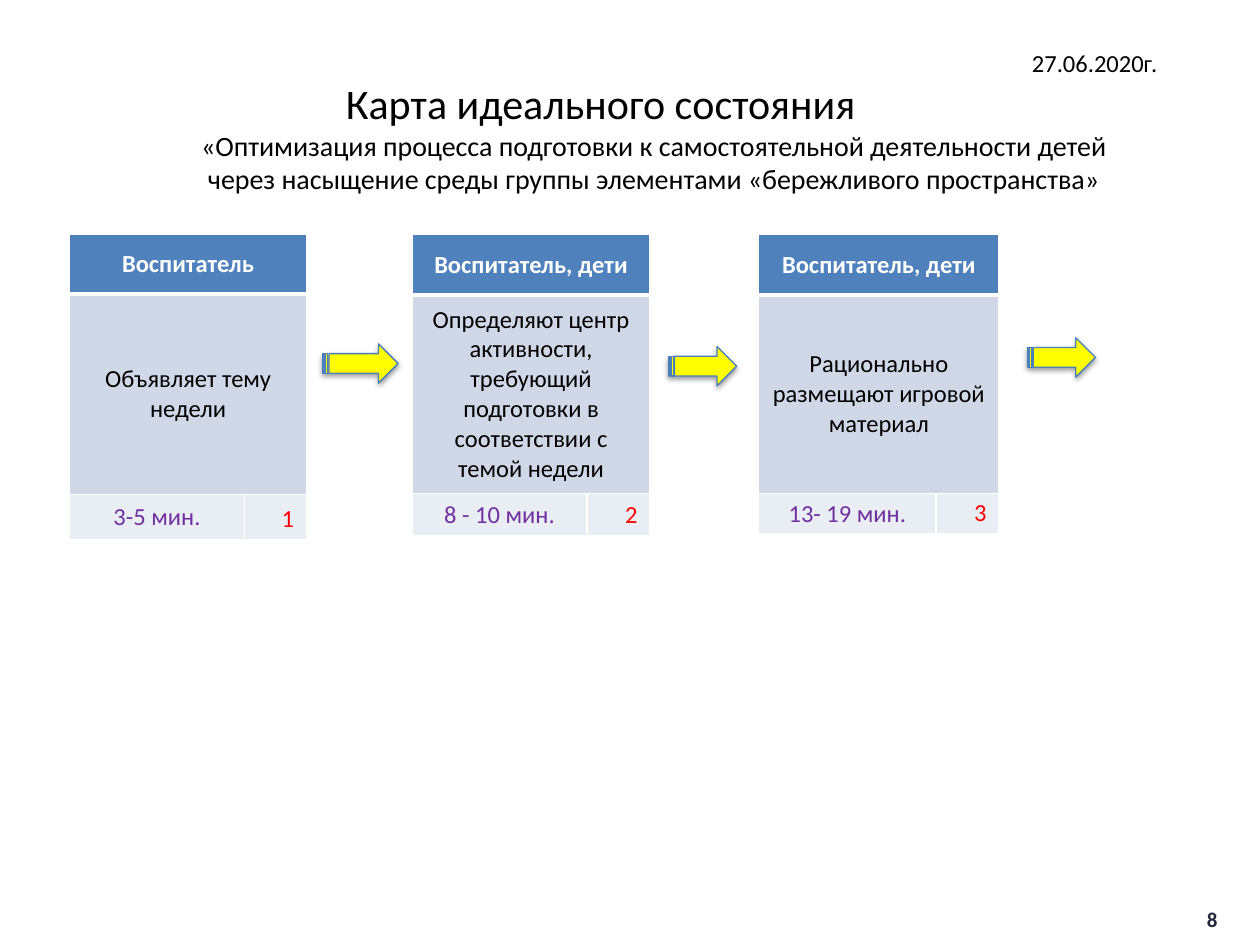
from lxml import etree
from pptx import Presentation
from pptx.dml.color import RGBColor
from pptx.enum.shapes import MSO_SHAPE
from pptx.enum.text import MSO_ANCHOR, MSO_AUTO_SIZE, PP_ALIGN
from pptx.oxml.ns import qn
from pptx.util import Pt

LEFT, CENTER, RIGHT = PP_ALIGN.LEFT, PP_ALIGN.CENTER, PP_ALIGN.RIGHT
MIDDLE, BOTTOM = MSO_ANCHOR.MIDDLE, MSO_ANCHOR.BOTTOM
NO_AUTOFIT = MSO_AUTO_SIZE.NONE
ARROW = MSO_SHAPE.STRIPED_RIGHT_ARROW

FONT = "Calibri"
TITLE_ONLY = 5
TABLE_TOP = 134

# Text, size, alignment, left indent and fixed line height of each title line
TITLE_LINES = [
    ("27.06.2020г.", 14, LEFT, 540, 29),
    ("Карта идеального состояния", 24, LEFT, 148, None),
    ("«Оптимизация процесса подготовки к самостоятельной деятельности детей",
     16, CENTER, 0, None),
    ("через насыщение среды группы элементами «бережливого пространства»",
     16, CENTER, 0, None),
]

# Left edge, column widths, row heights, vertical margin and texts of each step
STEPS = [
    (39.75, (100, 35.5), (34, 114.5, 26), 3.6,
     ("Воспитатель", "Объявляет тему недели", "3-5 мин.", "1")),
    (235.5, (100, 36), (34.5, 113.5, 23), 3.6,
     ("Воспитатель, дети",
      "Определяют центр активности, требующий подготовки в соответствии с темой недели",
      "8 - 10 мин.", "2")),
    (433.5, (101.5, 36), (34.5, 113.5, 22.5), 3,
     ("Воспитатель, дети", "Рационально размещают игровой материал",
      "13- 19 мин.", "3")),
]

ARROW_BOXES = [
    (184.5, 196.5, 43, 22.5),
    (382, 198, 39, 22.5),
    (587, 193, 39, 22.5),
]


def color(value):
    return RGBColor.from_string(value)


def format_font(font, **values):
    for name, value in values.items():
        if name == "color":
            font.color.rgb = color(value)
        else:
            setattr(font, name, value)


def set_text(paragraph, text, size, text_color, alignment, bold=False):
    run = paragraph.add_run()
    run.text = text
    paragraph.alignment = alignment
    format_font(run.font, name=FONT, size=Pt(size), bold=bold, color=text_color)


def add_title(slide, box):
    title = slide.shapes.title
    title.left, title.top, title.width, title.height = map(Pt, box)
    frame = title.text_frame
    frame.auto_size = NO_AUTOFIT
    frame.word_wrap = True
    frame.vertical_anchor = MIDDLE
    for index, (text, size, alignment, indent, line_height) in enumerate(TITLE_LINES):
        paragraph = frame.add_paragraph() if index else frame.paragraphs[0]
        set_text(paragraph, text, size, "000000", alignment)
        paragraph.space_before = Pt(0)
        paragraph.line_spacing = Pt(line_height) if line_height else 1.0
        properties = paragraph._p.get_or_add_pPr()
        properties.set("marL", str(Pt(indent)))
        properties.set("indent", "0")


def add_page_number(slide, box):
    frame = slide.shapes.add_textbox(*map(Pt, box)).text_frame
    frame.word_wrap = True
    frame.vertical_anchor = MIDDLE
    set_text(frame.paragraphs[0], "8", 12, "24263C", CENTER, bold=True)


def add_arrow(slide, box):
    arrow = slide.shapes.add_shape(ARROW, *map(Pt, box))
    arrow.fill.solid()
    arrow.fill.fore_color.rgb = color("FFFF00")
    arrow.line.color.rgb = color("4B7EBC")
    arrow.line.width = Pt(0.75)
    # Soft shadow straight below
    arrow.shadow.inherit = False
    effects = arrow._element.spPr.find(qn("a:effectLst"))
    shadow = etree.SubElement(effects, qn("a:outerShdw"), blurRad=str(Pt(3.1)),
                              dist=str(Pt(1.6)), dir="5400000", rotWithShape="0")
    shade = etree.SubElement(shadow, qn("a:srgbClr"), val="000000")
    etree.SubElement(shade, qn("a:alpha"), val="38000")


def set_borders(cell, row):
    widths = {"L": 1, "R": 1, "T": 3 if row == 1 else 1, "B": 3 if row == 0 else 1}
    properties = cell._tc.get_or_add_tcPr()
    for index, (side, width) in enumerate(widths.items()):
        line = etree.Element(qn(f"a:ln{side}"), w=str(Pt(width)))
        fill = etree.SubElement(line, qn("a:solidFill"))
        etree.SubElement(fill, qn("a:srgbClr"), val="FFFFFF")
        properties.insert(index, line)


def add_step(slide, left, top, widths, heights, margin, texts):
    table = slide.shapes.add_table(
        len(heights), len(widths), Pt(left), Pt(top),
        Pt(sum(widths)), Pt(sum(heights))).table
    for column, width in zip(table.columns, widths):
        column.width = Pt(width)
    for row, height in zip(table.rows, heights):
        row.height = Pt(height)
    for row, fill in enumerate(("4F81BD", "D0D8E8", "E9EDF4")):
        for column in range(len(widths)):
            cell = table.cell(row, column)
            cell.fill.solid()
            cell.fill.fore_color.rgb = color(fill)
            cell.margin_top = cell.margin_bottom = Pt(margin)
            set_borders(cell, row)

    # Performer and action span both columns
    for row in (0, 1):
        table.cell(row, 0).merge(table.cell(row, 1))
    formats = [
        (0, 0, "FFFFFF", CENTER, MIDDLE, True),
        (1, 0, "000000", CENTER, MIDDLE, False),
        (2, 0, "7030A0", CENTER, MIDDLE, False),
        (2, 1, "FF0000", RIGHT, BOTTOM, False),
    ]
    for text, (row, column, text_color, alignment, anchor, bold) in zip(texts, formats):
        cell = table.cell(row, column)
        cell.vertical_anchor = anchor
        set_text(cell.text_frame.paragraphs[0], text, 14, text_color, alignment, bold)


def main():
    presentation = Presentation()
    presentation.slide_width, presentation.slide_height = Pt(720), Pt(540)
    slide = presentation.slides.add_slide(presentation.slide_layouts[TITLE_ONLY])

    add_title(slide, (42.5, 21, 662.5, 85))
    add_page_number(slide, (679, 514, 27.5, 22.5))
    for box in ARROW_BOXES:
        add_arrow(slide, box)
    for left, widths, heights, margin, texts in STEPS:
        add_step(slide, left, TABLE_TOP, widths, heights, margin, texts)

    presentation.save("out.pptx")


if __name__ == "__main__":
    main()
